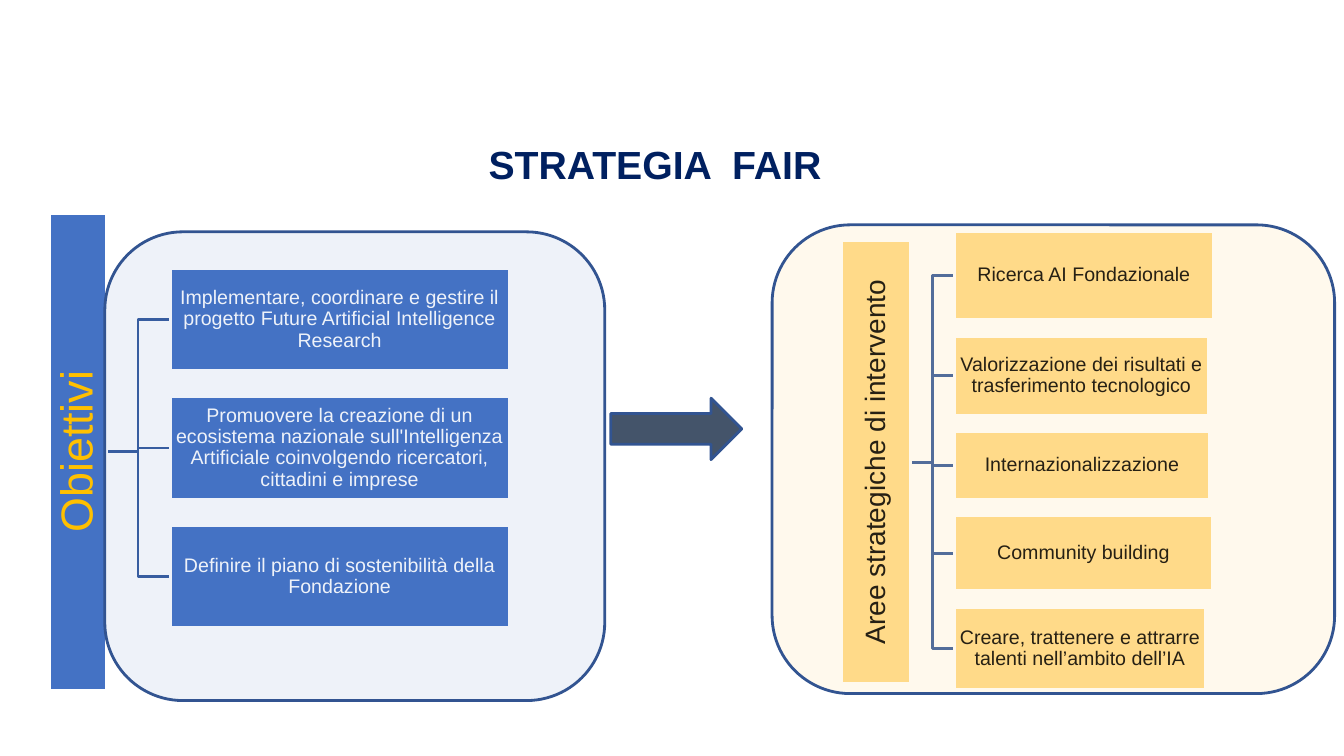
from pptx import Presentation
from pptx.dml.color import RGBColor
from pptx.enum.shapes import MSO_SHAPE as Kind
from pptx.enum.text import MSO_ANCHOR as Anchor, MSO_AUTO_SIZE as Fit, PP_ALIGN as Align
from pptx.oxml.ns import qn
from pptx.util import Pt
from lxml import etree

WHITE = RGBColor(0xFF, 0xFF, 0xFF)
BLACK = RGBColor(0x00, 0x00, 0x00)
BLUE = RGBColor(0x44, 0x72, 0xC4)
SAND = RGBColor(0xFF, 0xDA, 0x89)
GOLD = RGBColor(0xFF, 0xC0, 0x00)
NAVY = RGBColor(0x00, 0x20, 0x60)
SLATE = RGBColor(0x44, 0x54, 0x6A)
EDGE = RGBColor(0x32, 0x54, 0x91)
LINK = RGBColor(0x36, 0x5B, 0x9D)


def write(frame, text, size=14, color=BLACK, bold=False, align=Align.CENTER, space=0.9):
    para = frame.paragraphs[0]
    para.alignment = align
    para.line_spacing = space
    run = para.add_run()
    run.text = text
    font = run.font
    font.name, font.size, font.bold = "Arial", Pt(size), bold
    font.color.rgb = color


class Board:
    line = Pt(2)

    def __init__(self, slide):
        self.shapes = slide.shapes

    def shape(self, kind, left, top, width, height, fill, edge, alpha=None):
        item = self.shapes.add_shape(kind, Pt(left), Pt(top), Pt(width), Pt(height))
        item.shadow.inherit = False
        item.fill.solid()
        item.fill.fore_color.rgb = fill
        item.line.color.rgb = edge
        item.line.width = self.line
        if alpha is not None:
            tint = item.element.spPr.find(qn("a:solidFill"))[0]
            etree.SubElement(tint, qn("a:alpha")).set("val", str(alpha * 1000))
        return item

    def box(self, left, top, width, height, text, fill, pad=0.7, **style):
        item = self.shape(Kind.RECTANGLE, left, top, width, height, fill, WHITE)
        frame = item.text_frame
        frame.word_wrap = True
        frame.vertical_anchor = Anchor.MIDDLE
        frame.margin_left = frame.margin_right = Pt(pad)
        frame.margin_top = frame.margin_bottom = Pt(pad)
        write(frame, text, **style)
        return item

    def label(self, mid_x, mid_y, length, depth, text, fill, **style):
        item = self.box(mid_x - length / 2, mid_y - depth / 2, length, depth,
                        text, fill, **style)
        item.rotation = 270

    def elbow(self, x1, y1, x2, y2):
        mid = Pt((x1 + x2) / 2)
        pen = self.shapes.build_freeform(Pt(x1), Pt(y1))
        pen.add_line_segments([(mid, Pt(y1)), (mid, Pt(y2)), (Pt(x2), Pt(y2))], close=False)
        item = pen.convert_to_shape()
        item.shadow.inherit = False
        item.fill.background()
        item.line.color.rgb = LINK
        item.line.width = self.line

    def tree(self, root, left, top, gap, rows, fill, **style):
        """Stack boxes from top to bottom and link each one to the root."""
        for text, width, height in rows:
            self.elbow(*root, left, top + height / 2)
            self.box(left, top, width, height, text, fill, **style)
            top += height + gap

    def title(self, left, top, width, height, text, **style):
        item = self.shapes.add_textbox(Pt(left), Pt(top), Pt(width), Pt(height))
        item.text_frame.word_wrap = False
        item.text_frame.auto_size = Fit.SHAPE_TO_FIT_TEXT
        write(item.text_frame, text, **style)


def main():
    deck = Presentation()
    deck.slide_width, deck.slide_height = Pt(960), Pt(540)
    board = Board(deck.slides.add_slide(deck.slide_layouts[6]))

    # Goals
    goals = [
        "Implementare, coordinare e gestire il progetto Future Artificial Intelligence Research",
        "Promuovere la creazione di un ecosistema nazionale sull'Intelligenza Artificiale "
        "coinvolgendo ricercatori, cittadini e imprese",
        "Definire il piano di sostenibilità della Fondazione",
    ]
    board.tree((75.6, 322.6), 121.7, 191.5, 18.4,
               [(goal, 241.9, 73.4) for goal in goals], BLUE, color=WHITE)
    board.label(55.8, 322.6, 340.6, 40.3, "Obiettivi", BLUE, pad=1.4, size=32, color=GOLD)

    # Areas of action
    areas = [
        ("Ricerca AI Fondazionale", 185, 62.6),
        ("Valorizzazione dei risultati e trasferimento tecnologico", 181.4, 56.2),
        ("Internazionalizzazione", 182.2, 48.2),
        ("Community building", 184.3, 53.3),
        ("Creare, trattenere e attrarre talenti nell’ambito dell’IA", 179.3, 58.3),
    ]
    board.tree((650.2, 330.1), 681.8, 165.6, 12, areas, SAND, pad=0)
    board.label(625.7, 330.1, 316.8, 49.7, "Aree strategiche di intervento", SAND, size=20)

    # Clear panels over both trees, and the arrow between them
    board.shape(Kind.ROUNDED_RECTANGLE, 551.5, 160.6, 401.8, 334.8, SAND, EDGE, alpha=15)
    board.shape(Kind.ROUNDED_RECTANGLE, 74.9, 165.6, 357.1, 334.8, BLUE, EDGE, alpha=9)
    board.shape(Kind.RIGHT_ARROW, 436.3, 284.4, 93.6, 43.9, SLATE, EDGE)

    # Title
    board.title(342, 96.5, 259.2, 41, "STRATEGIA  FAIR", size=28, color=NAVY,
                bold=True, align=Align.LEFT, space=1)

    deck.save("out.pptx")


if __name__ == "__main__":
    main()
